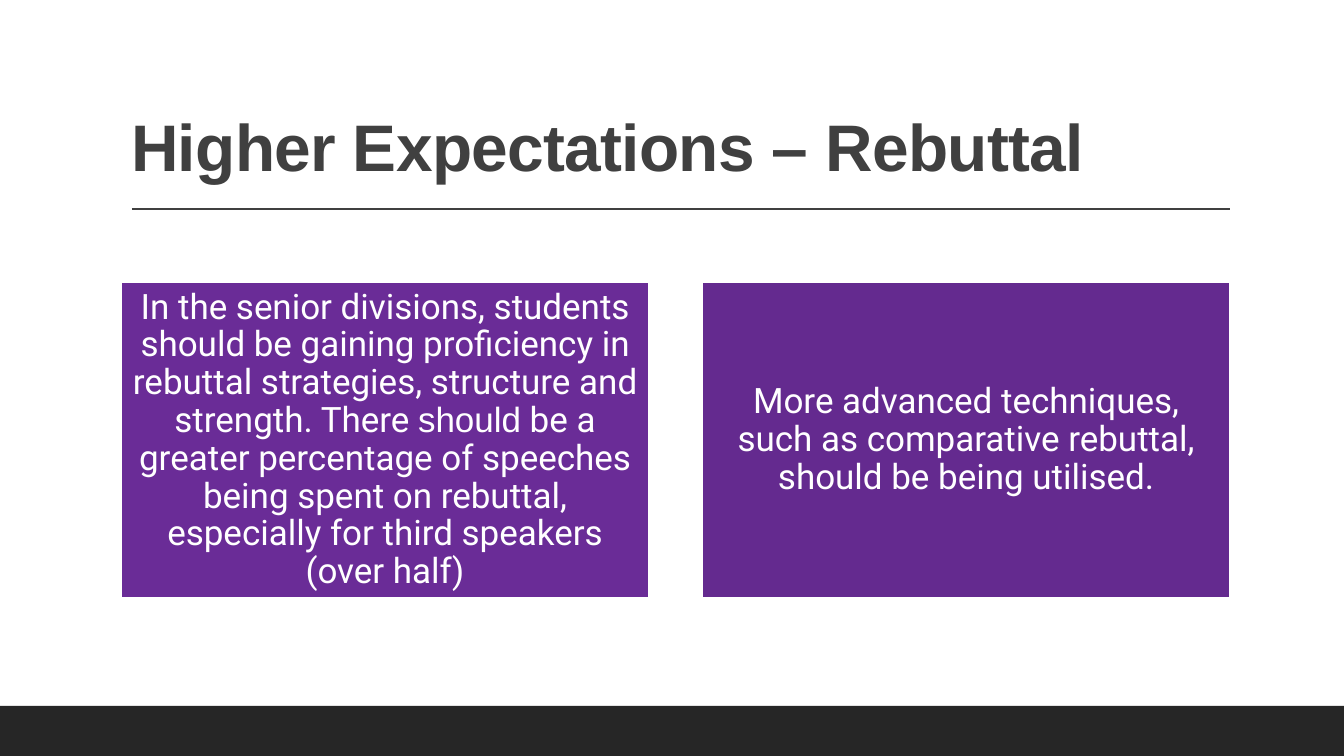
"""Builds the slide on higher expectations for rebuttal."""
from lxml import etree
from pptx import Presentation
from pptx.dml.color import RGBColor
from pptx.enum.shapes import MSO_CONNECTOR, MSO_SHAPE
from pptx.enum.text import MSO_ANCHOR, MSO_AUTO_SIZE, PP_ALIGN
from pptx.oxml.ns import qn
from pptx.util import Emu, Pt

RECTANGLE = MSO_SHAPE.RECTANGLE
STRAIGHT = MSO_CONNECTOR.STRAIGHT
MIDDLE, BOTTOM = MSO_ANCHOR.MIDDLE, MSO_ANCHOR.BOTTOM
LEFT, CENTER = PP_ALIGN.LEFT, PP_ALIGN.CENTER
NO_AUTOFIT = MSO_AUTO_SIZE.NONE
PX = 914400 / 100.8


def px(*lengths):
    return [Emu(round(length * PX)) for length in lengths]


def paint(color_format, hex_color):
    color_format.rgb = RGBColor.from_string(hex_color)


deck = Presentation()
deck.slide_width, deck.slide_height = px(1344, 756)
slide = deck.slides.add_slide(deck.slide_layouts[5])
slide.background.fill.solid()
paint(slide.background.fill.fore_color, "FFFFFF")

title = slide.shapes.title
title.left, title.top, title.width, title.height = px(121, 31, 1109, 160)
title.text_frame.auto_size = NO_AUTOFIT
title.text_frame.word_wrap = True
title.text_frame.vertical_anchor = BOTTOM
heading = title.text_frame.paragraphs[0]
heading.alignment = LEFT
heading.line_spacing = 0.9
heading_run = heading.add_run()
heading_run.text = "Higher Expectations – Rebuttal"
heading_run.font.name = "Arial"
heading_run.font.size = Pt(47)
heading_run.font.bold = True
paint(heading_run.font.color, "404040")
heading_run.font._element.set("spc", "-50")

title_rule = slide.shapes.add_connector(STRAIGHT, *px(132, 209, 1230, 209))
title_rule.line.width = Pt(1)
paint(title_rule.line.color, "404040")
etree.SubElement(title_rule._element.spPr, qn("a:effectLst"))

footer_band = slide.shapes.add_shape(RECTANGLE, *px(0, 706, 1344, 50))
footer_band.shadow.inherit = False
footer_band.fill.solid()
paint(footer_band.fill.fore_color, "262626")
footer_band.line.fill.background()

expectations = [
    ("6A2C97", [
        ("In the senior divisions, students should be gaining proficiency in "
         "rebuttal strategies, structure and strength. There ", "Roboto"),
        ("should", "Arial"),
        (" be a greater percentage of speeches being spent on rebuttal, "
         "especially for third speakers (over half)", "Roboto"),
    ]),
    ("642A8F", [
        ("More advanced techniques, such as comparative rebuttal, "
         "should be being utilised.", "Roboto"),
    ]),
]

for column, (card_color, wording) in enumerate(expectations):
    card = slide.shapes.add_shape(RECTANGLE, *px(121 + column * 581, 282, 528, 316))
    card.shadow.inherit = False
    card.fill.solid()
    paint(card.fill.fore_color, card_color)
    card.line.width = Pt(1.25)
    paint(card.line.color, "FFFFFF")
    frame = card.text_frame
    frame.word_wrap = True
    frame.vertical_anchor = MIDDLE
    frame.margin_left, frame.margin_top, frame.margin_right, frame.margin_bottom = px(10, 10, 10, 10)
    statement = frame.paragraphs[0]
    statement.alignment = CENTER
    statement.line_spacing = 0.9
    for words, font_name in wording:
        run = statement.add_run()
        run.text = words
        run.font.name = font_name
        run.font.size = Pt(25)
        paint(run.font.color, "FFFFFF")

deck.save("out.pptx")
